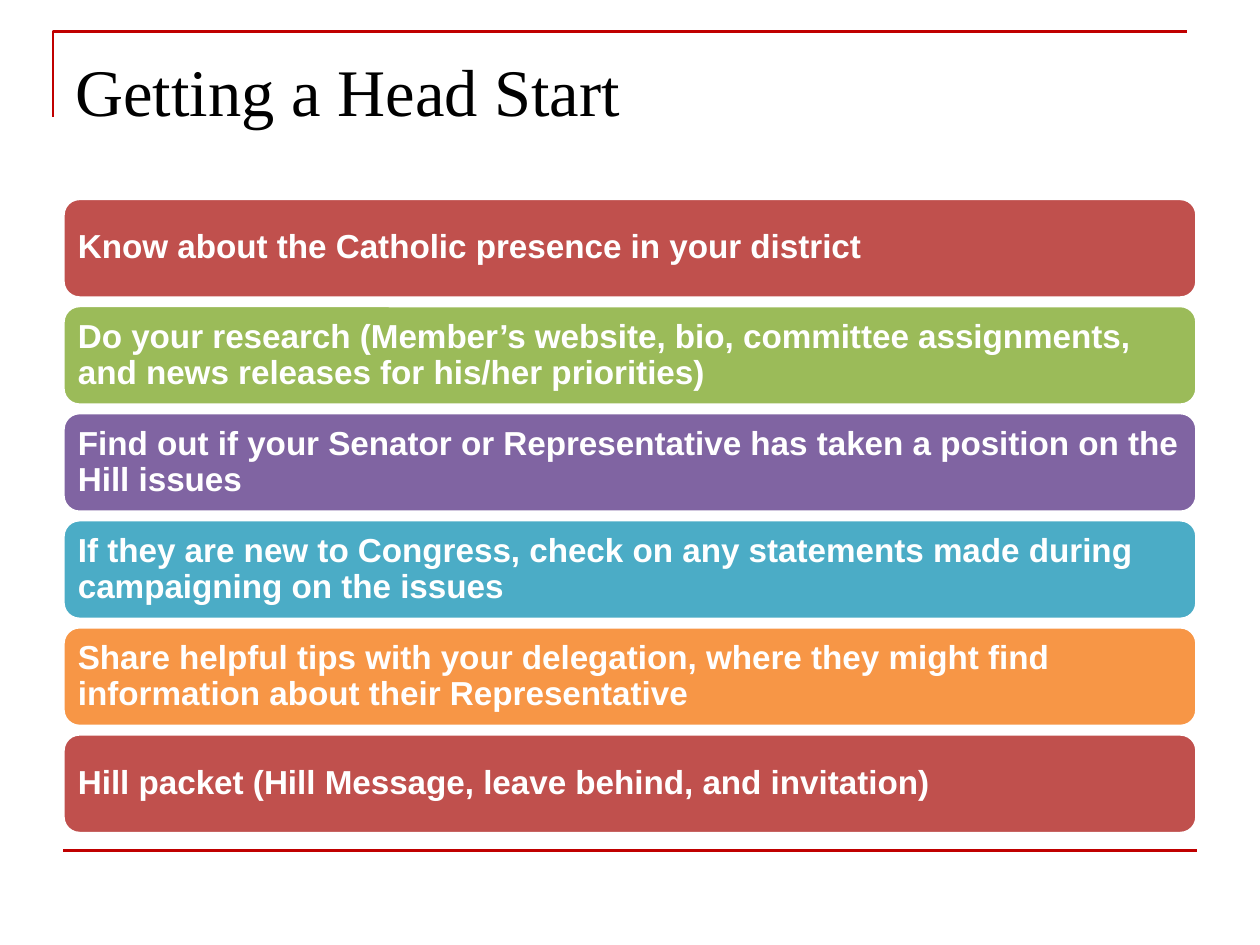
from pptx import Presentation
from pptx.dml.color import RGBColor
from pptx.enum.shapes import MSO_CONNECTOR, MSO_SHAPE
from pptx.enum.text import MSO_ANCHOR, PP_ALIGN
from pptx.oxml.ns import qn
from pptx.util import Inches, Pt

ROUNDED = MSO_SHAPE.ROUNDED_RECTANGLE
STRAIGHT = MSO_CONNECTOR.STRAIGHT
TOP, MIDDLE = MSO_ANCHOR.TOP, MSO_ANCHOR.MIDDLE
LEFT = PP_ALIGN.LEFT

WIDTH, HEIGHT = Inches(10), Inches(7.5)
MARGIN = 0.05 * WIDTH
CONTENT_WIDTH = 0.9 * WIDTH
BAR_SHARE = 0.93  # part of each row that its bar fills

COLORS = {
    "rule": "C00000",
    "title": "000000",
    "white": "FFFFFF",
    "red": "C0504D",
    "green": "9BBB59",
    "purple": "8064A2",
    "teal": "4BACC6",
    "orange": "F79646",
}

TIPS = [
    ("red", "Know about the Catholic presence in your district"),
    ("green", "Do your research (Member’s website, bio, committee assignments, "
              "and news releases for his/her priorities)"),
    ("purple", "Find out if your Senator or Representative has taken a position "
               "on the Hill issues"),
    ("teal", "If they are new to Congress, check on any statements made during "
             "campaigning on the issues"),
    ("orange", "Share helpful tips with your delegation, where they might find "
               "information about their Representative"),
    ("red", "Hill packet (Hill Message, leave behind, and invitation)"),
]


def color(name):
    return RGBColor.from_string(COLORS[name])


def set_line(shape, name, width):
    shape.line.color.rgb = color(name)
    shape.line.width = Pt(width)


def write(shape, text, font_name, size, color_name, anchor, bold=False):
    """Fill the shape with one left-aligned paragraph and return it."""
    frame = shape.text_frame
    frame.word_wrap = True
    frame.vertical_anchor = anchor
    paragraph = frame.paragraphs[0]
    paragraph.text = text
    paragraph.alignment = LEFT
    font = paragraph.font
    font.name, font.size, font.bold = font_name, Pt(size), bold
    font.color.rgb = color(color_name)
    return paragraph


def add_corner_rule(slide, left, top, width, height):
    builder = slide.shapes.build_freeform(int(left), int(top + height))
    builder.add_line_segments(
        [(int(left), int(top)), (int(left + width), int(top))], close=False)
    corner = builder.convert_to_shape()
    corner.shadow.inherit = False
    corner.fill.background()
    set_line(corner, "rule", 1.5)


def add_bottom_rule(slide, left, top, width):
    rule = slide.shapes.add_connector(
        STRAIGHT, int(left), int(top), int(left + width), int(top))
    set_line(rule, "rule", 1.5)
    properties = rule._element.spPr
    properties.append(properties.makeelement(qn("a:effectLst"), {}))


def add_title(slide, left, top, width, height):
    box = slide.shapes.add_textbox(int(left), int(top), int(width), int(height))
    box.text_frame.margin_top = Inches(0.1)
    write(box, "Getting a Head Start", "Times New Roman", 38, "title", TOP)


def add_tips(slide, left, top, width, height):
    """Stack one rounded bar per tip in equal rows of the box."""
    row = height / len(TIPS)
    for index, (fill, text) in enumerate(TIPS):
        bar = slide.shapes.add_shape(
            ROUNDED, int(left), int(top + index * row), int(width), int(row * BAR_SHARE))
        bar.shadow.inherit = False
        bar.fill.solid()
        bar.fill.fore_color.rgb = color(fill)
        set_line(bar, "white", 2)
        frame = bar.text_frame
        frame.margin_left = frame.margin_right = Inches(0.08)
        frame.margin_top = frame.margin_bottom = Inches(0.08)
        paragraph = write(bar, text, "Arial", 19, "white", MIDDLE, bold=True)
        paragraph.line_spacing = 0.9


def main():
    presentation = Presentation()
    presentation.slide_width, presentation.slide_height = WIDTH, HEIGHT
    slide = presentation.slides.add_slide(presentation.slide_layouts[6])
    add_corner_rule(slide, 0.042 * WIDTH, HEIGHT / 30, CONTENT_WIDTH, 0.09 * HEIGHT)
    add_bottom_rule(slide, MARGIN, 0.9 * HEIGHT, CONTENT_WIDTH)
    add_title(slide, MARGIN, 0.04 * HEIGHT, CONTENT_WIDTH, HEIGHT / 6)
    add_tips(slide, MARGIN, 0.21 * HEIGHT, CONTENT_WIDTH, 0.68 * HEIGHT)
    presentation.save("out.pptx")


if __name__ == "__main__":
    main()
